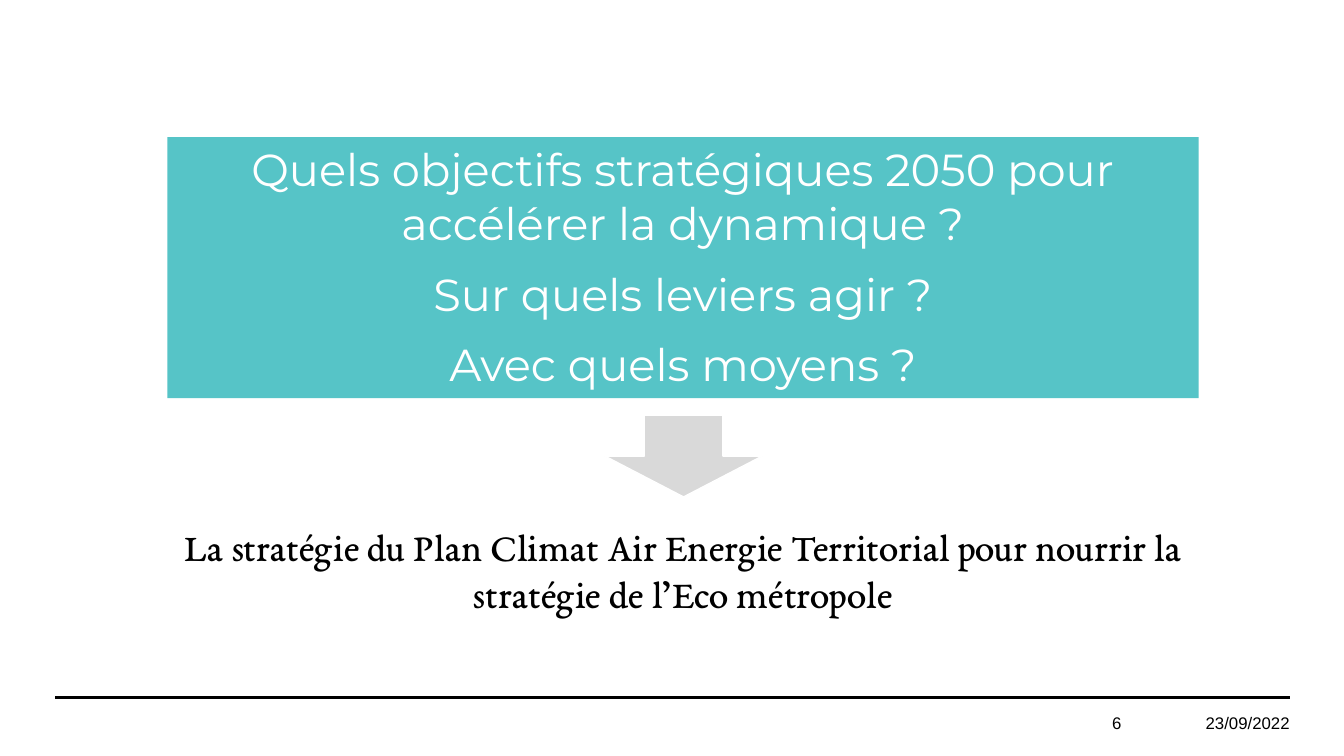
from pptx import Presentation
from pptx.dml.color import RGBColor
from pptx.enum.shapes import MSO_CONNECTOR, MSO_SHAPE
from pptx.enum.text import MSO_ANCHOR, PP_ALIGN
from pptx.oxml.ns import qn
from pptx.util import Inches, Pt
from lxml.etree import SubElement


def color(hex_code):
    """Turn a hex string into a colour."""
    return RGBColor.from_string(hex_code)


def write(shape, paragraphs, font, size, ink, align=PP_ALIGN.CENTER,
          anchor=MSO_ANCHOR.TOP, space_after=0):
    """Fill a shape with paragraphs of one style."""
    frame = shape.text_frame
    frame.word_wrap = True
    frame.vertical_anchor = anchor
    for index, wording in enumerate(paragraphs):
        paragraph = frame.add_paragraph() if index else frame.paragraphs[0]
        paragraph.alignment = align
        paragraph.space_after = Pt(space_after)
        run = paragraph.add_run()
        run.text = wording
        run.font.name = font
        run.font.size = Pt(size)
        run.font.color.rgb = color(ink)


def add_block(slide, preset, box, fill, outline=None):
    """Add a filled preset shape, outlined only on request."""
    block = slide.shapes.add_shape(preset, *map(Inches, box))
    block.shadow.inherit = False
    block.fill.solid()
    block.fill.fore_color.rgb = color(fill)
    if outline:
        block.line.color.rgb = color(outline)
        block.line.width = Pt(1)
    else:
        block.line.fill.background()
    return block


def add_label(slide, box, wording, font, size, **style):
    """Add a black text box."""
    label = slide.shapes.add_textbox(*map(Inches, box))
    write(label, [wording], font, size, "000000", **style)


def add_rule(slide, left, right, top):
    """Add a horizontal black line."""
    rule = slide.shapes.add_connector(
        MSO_CONNECTOR.STRAIGHT, Inches(left), Inches(top), Inches(right), Inches(top))
    rule.line.color.rgb = color("000000")
    rule.line.width = Pt(1.5)
    SubElement(rule._element.spPr, qn("a:effectLst"))


def main():
    """Build the strategy slide."""
    deck = Presentation()
    deck.slide_width, deck.slide_height = Inches(13.33), Inches(7.5)
    slide = deck.slides.add_slide(deck.slide_layouts[6])

    add_rule(slide, 0.55, 12.79, 6.92)
    footer = {"align": PP_ALIGN.RIGHT, "anchor": MSO_ANCHOR.MIDDLE}
    add_label(slide, (11.64, 6.97, 1.25, 0.4), "23/09/2022", "Arial", 12, **footer)
    add_label(slide, (10.44, 6.97, 0.78, 0.4), "6", "Arial", 12, **footer)

    questions = add_block(slide, MSO_SHAPE.RECTANGLE, (1.66, 1.36, 10.23, 2.59), "56C4C7")
    write(questions, [
        "Quels objectifs stratégiques 2050 pour accélérer la dynamique ?",
        "Sur quels leviers agir ?",
        "Avec quels moyens ?",
    ], "Montserrat", 32, "FFFFFF", space_after=12)

    add_label(slide, (1.55, 5.13, 10.45, 1.04),
              "La stratégie du Plan Climat Air Energie Territorial pour nourrir la "
              "stratégie de l’Eco métropole", "EB Garamond", 28)
    add_block(slide, MSO_SHAPE.DOWN_ARROW, (6, 4.12, 1.56, 0.81), "D9D9D9", "FFFFFF")

    deck.save("out.pptx")


if __name__ == "__main__":
    main()
